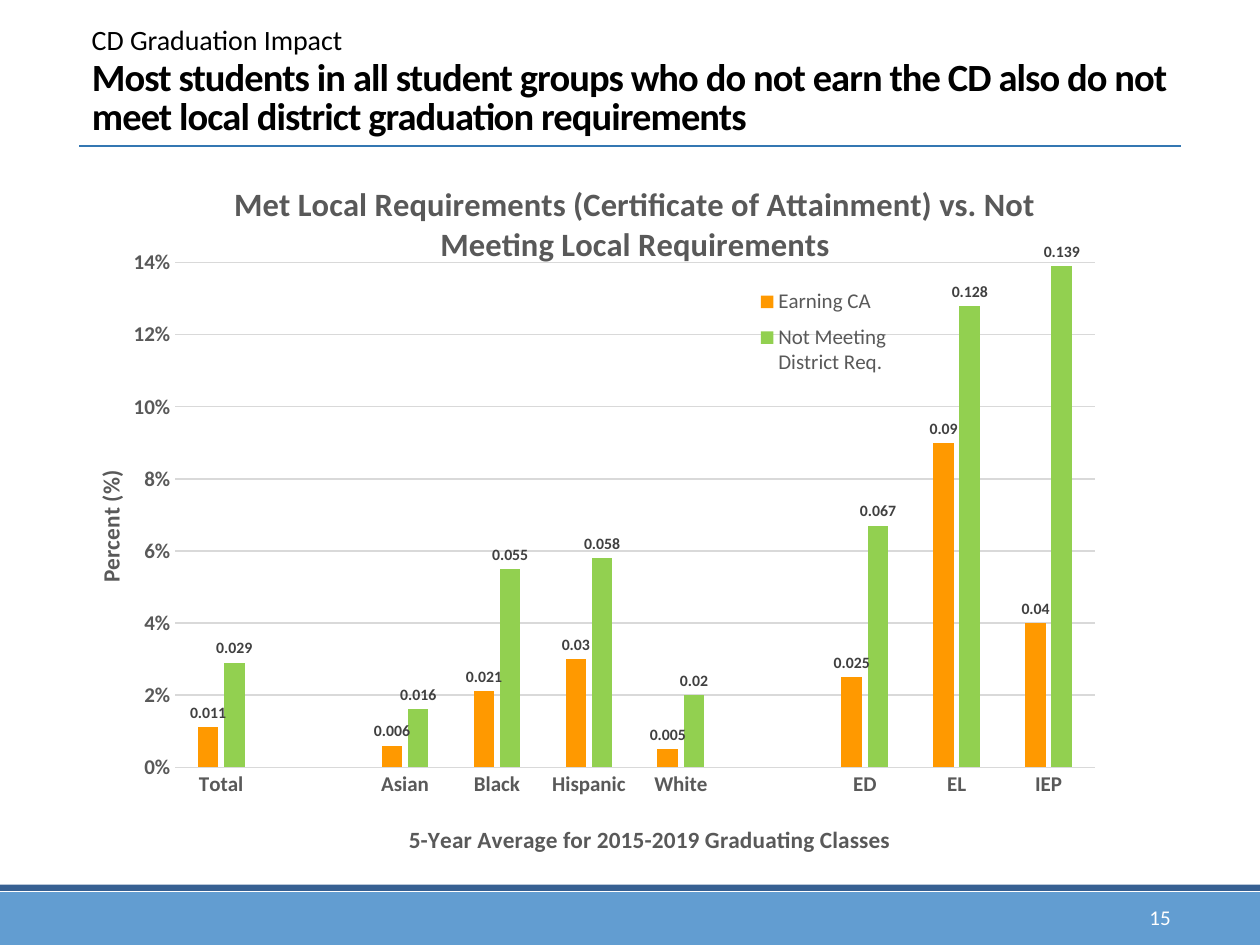
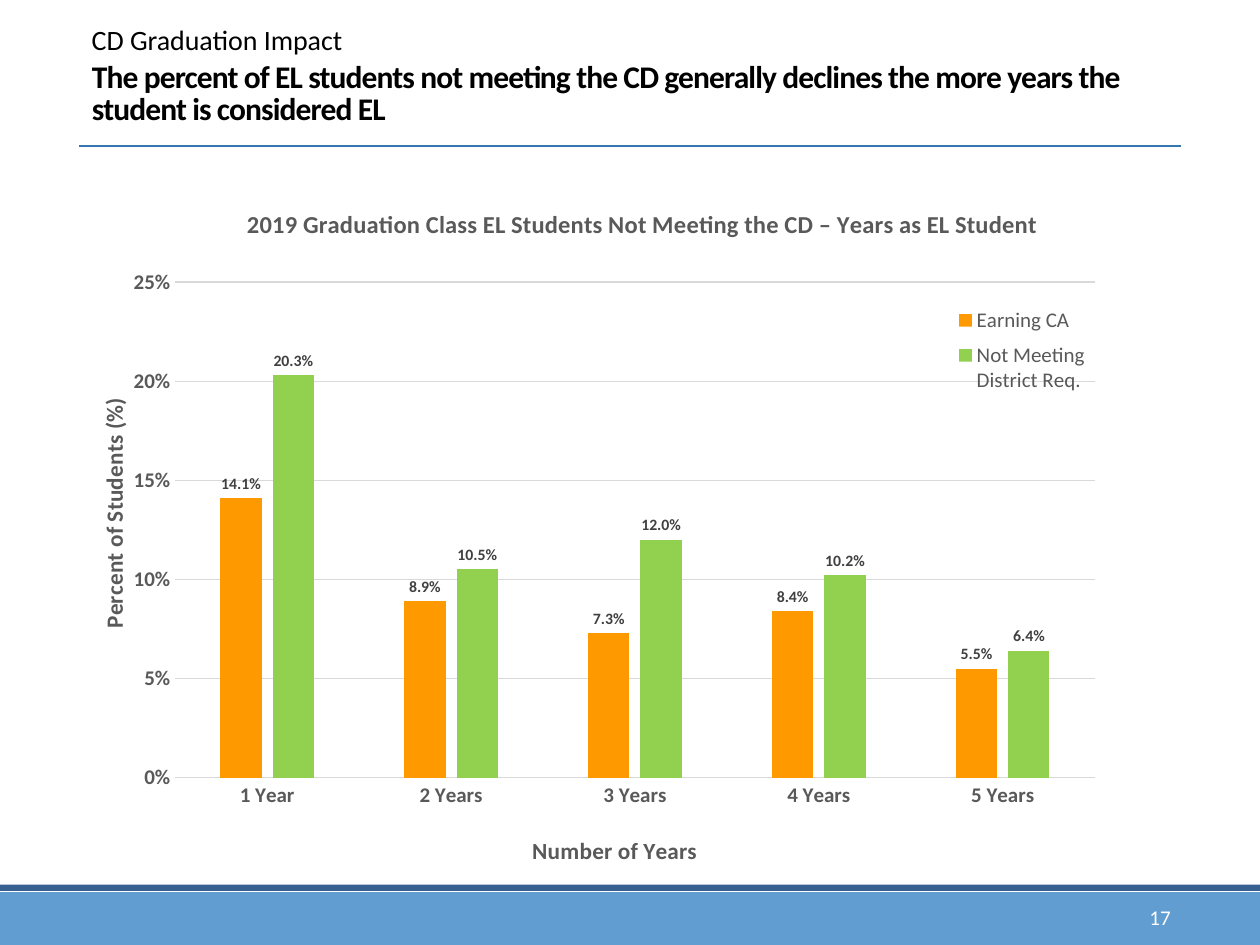
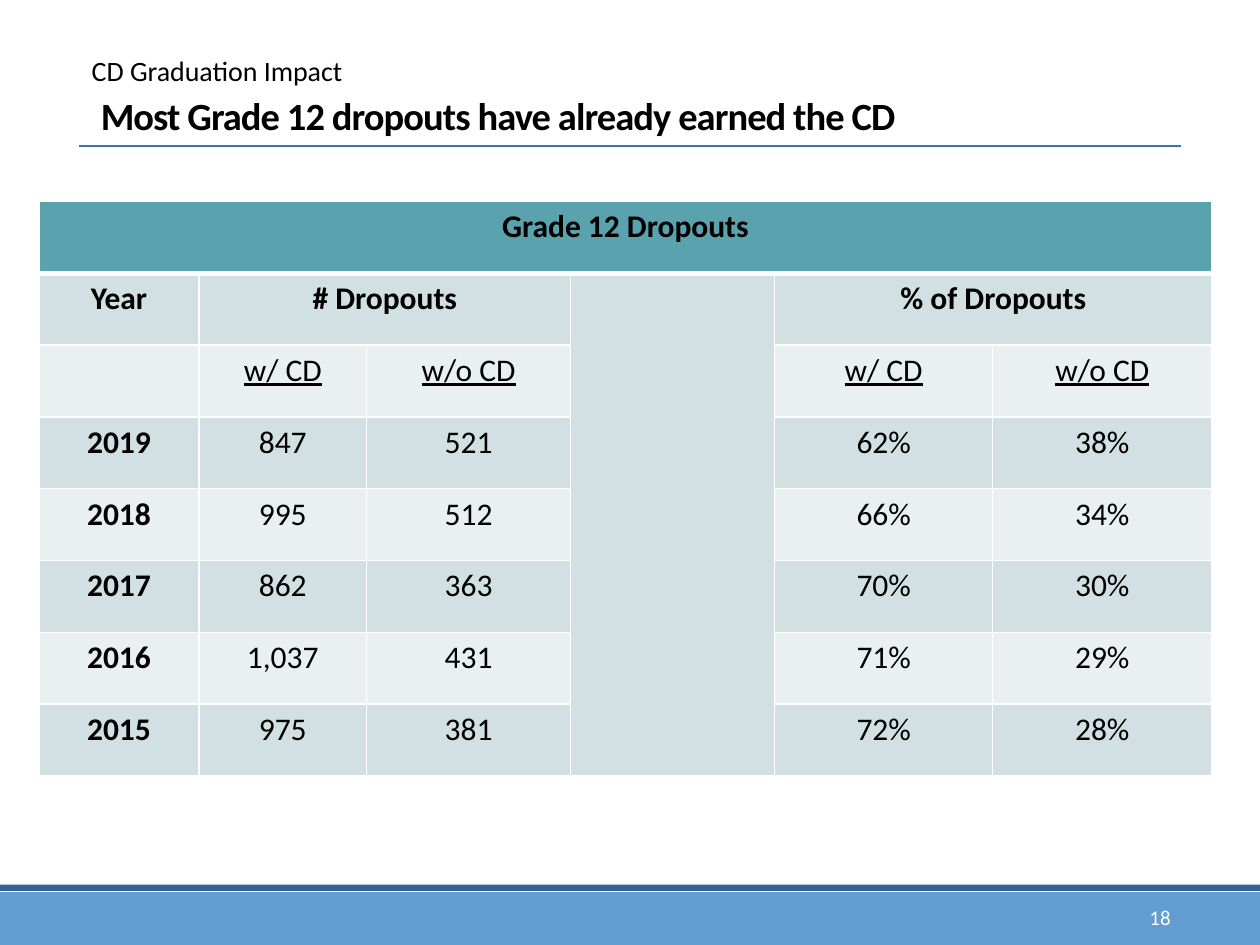
from lxml import etree
from pptx import Presentation
from pptx import util as u
from pptx.chart.data import CategoryChartData
from pptx.dml.color import RGBColor
from pptx.enum import chart as ch, shapes, text
from pptx.oxml import parse_xml
from pptx.oxml.ns import nsdecls, qn

FONT = "Calibri"
BLACK, WHITE, GREY, LABEL, GRID = "000000", "FFFFFF", "595959", "404040", "D9D9D9"
BAND, STRIPE, RULE = "629DD1", "376092", "3477B2"
HEADER, SHADE, TINT = "5AA2AE", "D2E0E3", "EAF0F2"
SERIES_COLORS = ("FF9900", "92D050")
LEFT, WIDTH = 0.63, 8.75


def rgb(color):
    return RGBColor.from_string(color)


def apply(target, **values):
    for name, value in values.items():
        setattr(target, name, value)


def style_font(font, size, color, **values):
    apply(font, name=FONT, size=u.Pt(size), **values)
    font.color.rgb = rgb(color)


def place(element, index, x, y, w=None, h=None, inner=False):
    for old in element.findall(qn("c:layout")):
        element.remove(old)
    layout = parse_xml(f'<c:layout {nsdecls("c")}><c:manualLayout/></c:layout>')
    values = {"layoutTarget": "inner" if inner else None, "xMode": "edge",
              "yMode": "edge", "x": x, "y": y, "w": w, "h": h}
    for tag, value in values.items():
        if value is not None:
            etree.SubElement(layout[0], qn(f"c:{tag}")).set("val", str(value))
    element.insert(index, layout)


def set_borders(cell, bottom=1):
    properties = cell._tc.get_or_add_tcPr()
    for index, side in enumerate("LRTB"):
        width = u.Pt(bottom if side == "B" else 1)
        properties.insert(index, parse_xml(
            f'<a:ln{side} {nsdecls("a")} w="{width}"><a:solidFill>'
            f'<a:srgbClr val="{WHITE}"/></a:solidFill></a:ln{side}>'))


class Deck:
    def __init__(self):
        self.prs = Presentation()
        apply(self.prs, slide_width=u.Inches(10), slide_height=u.Inches(7.5))
        self.slide = None

    def start(self, number, title, size=22, top=0.31, height=0.84, indent=0.1, section_top=0.13):
        self.slide = self.prs.slides.add_slide(self.prs.slide_layouts[5])
        self.band(7.08, 0.42, BAND)
        self.band(7.02, 0.05, STRIPE)
        self.rule(1.16)
        self.label(str(number), 8.31, 7.18, 1.08, 0.2, 12, WHITE, text.PP_ALIGN.RIGHT)
        self.title(title, size, top, height, indent)
        self.label("CD Graduation Impact", LEFT, section_top, 2.6, 0.37, 16, BLACK)

    def band(self, top, height, color):
        band = self.slide.shapes.add_shape(
            shapes.MSO_SHAPE.RECTANGLE, 0, u.Inches(top), u.Inches(10), u.Inches(height))
        band.shadow.inherit = False
        band.fill.solid()
        band.fill.fore_color.rgb = rgb(color)
        band.line.fill.background()

    def rule(self, y):
        rule = self.slide.shapes.add_connector(
            shapes.MSO_CONNECTOR.STRAIGHT, u.Inches(LEFT), u.Inches(y), u.Inches(9.37), u.Inches(y))
        rule.line.color.rgb = rgb(RULE)
        rule.line.width = u.Pt(1)
        etree.SubElement(rule._element.spPr, qn("a:effectLst"))

    def label(self, words, left, top, width, height, size, color, align=text.PP_ALIGN.LEFT):
        box = self.slide.shapes.add_textbox(*map(u.Inches, (left, top, width, height)))
        apply(box.text_frame, word_wrap=True, vertical_anchor=text.MSO_ANCHOR.MIDDLE)
        paragraph = box.text_frame.paragraphs[0]
        apply(paragraph, text=words, alignment=align)
        style_font(paragraph.runs[0].font, size, color)

    def title(self, words, size, top, height, indent):
        title = self.slide.shapes.title
        apply(title, left=u.Inches(LEFT), top=u.Inches(top),
              width=u.Inches(WIDTH), height=u.Inches(height))
        apply(title.text_frame, text=words, word_wrap=True, margin_left=u.Inches(indent),
              auto_size=text.MSO_AUTO_SIZE.NONE, vertical_anchor=text.MSO_ANCHOR.BOTTOM)
        paragraph = title.text_frame.paragraphs[0]
        apply(paragraph, alignment=text.PP_ALIGN.LEFT, line_spacing=0.85)
        style_font(paragraph.runs[0].font, size, BLACK, bold=True)
        paragraph.runs[0]._r.get_or_add_rPr().set("spc", "-50")

    def heading(self, holder, words, size, spot):
        holder.text_frame.text = words
        style_font(holder.text_frame.paragraphs[0].runs[0].font, size, GREY, bold=True)
        place(holder._element, 1, *spot)

    def axis(self, axis, words, spot):
        apply(axis, has_title=True, major_tick_mark=ch.XL_TICK_MARK.NONE,
              minor_tick_mark=ch.XL_TICK_MARK.NONE)
        style_font(axis.tick_labels.font, 12, GREY, bold=True)
        self.heading(axis.axis_title, words, 13.3, spot)

    def chart(self, top, height, categories, series, heading, category_title, value_title,
              maximum, step, label_format, legend_spot):
        data = CategoryChartData()
        data.categories = categories
        for name, values in series.items():
            data.add_series(name, values)
        chart = self.slide.shapes.add_chart(
            ch.XL_CHART_TYPE.COLUMN_CLUSTERED,
            *map(u.Inches, (LEFT, top, WIDTH, height)), data).chart
        style_font(chart.font, 10, BLACK)
        apply(chart, has_title=True, has_legend=True)
        self.heading(chart.chart_title, *heading)

        self.axis(chart.category_axis, *category_title)
        line = chart.category_axis.format.line
        line.color.rgb = rgb(GRID)
        line.width = u.Pt(0.75)

        value_axis = chart.value_axis
        self.axis(value_axis, *value_title)
        body = value_axis.axis_title._element.find(".//" + qn("a:bodyPr"))
        body.set("rot", "-5400000")
        body.set("vert", "horz")
        apply(value_axis, minimum_scale=0, maximum_scale=maximum, major_unit=step)
        apply(value_axis.tick_labels, number_format="0%", number_format_is_linked=False)
        value_axis.format.line.fill.background()
        grid = value_axis.major_gridlines.format.line
        grid.color.rgb = rgb(GRID)
        grid.width = u.Pt(0.75)

        apply(chart.legend, position=ch.XL_LEGEND_POSITION.RIGHT, include_in_layout=False)
        style_font(chart.legend.font, 12, GREY)
        place(chart.legend._element, 1, *legend_spot, 0.14, 0.15)

        plot = chart.plots[0]
        apply(plot, gap_width=219, overlap=-27, vary_by_categories=False)
        place(chart._chartSpace.chart.plotArea, 0, 0.087, 0.163, 0.834, 0.705, inner=True)
        for bars, color in zip(plot.series, SERIES_COLORS):
            bars.format.fill.solid()
            bars.format.fill.fore_color.rgb = rgb(color)
            apply(bars.data_labels, show_value=True, number_format=label_format,
                  number_format_is_linked=False, position=ch.XL_LABEL_POSITION.OUTSIDE_END)
            style_font(bars.data_labels.font, 9, LABEL, bold=True)

    def table(self, rows, widths, left, top, row_height, merges):
        table = self.slide.shapes.add_table(
            len(rows), len(widths), u.Inches(left), u.Inches(top),
            u.Inches(sum(widths)), u.Inches(row_height * len(rows))).table
        for column, width in zip(table.columns, widths):
            column.width = u.Inches(width)
        for r, row in enumerate(rows):
            for c, words in enumerate(row):
                cell = table.cell(r, c)
                cell.fill.solid()
                cell.fill.fore_color.rgb = rgb(HEADER if r == 0 else SHADE if r % 2 else TINT)
                set_borders(cell, bottom=3 if r == 0 else 1)
                paragraph = cell.text_frame.paragraphs[0]
                apply(paragraph, text=words, alignment=text.PP_ALIGN.CENTER)
                style_font(paragraph.font, 18, BLACK)
                for run in paragraph.runs:
                    style_font(run.font, 18, BLACK, bold=r < 2 or c == 0, underline=r == 2)
        for first, last in merges:
            table.cell(*first).merge(table.cell(*last))


def main():
    deck = Deck()

    deck.start(15, "Most students in all student groups who do not earn the CD also do not "
                   "meet local district graduation requirements")
    deck.chart(
        1.16, 5.68,
        ["Total", "", "Asian", "Black", "Hispanic", "White", "", "ED", "EL", "IEP"],
        {"Earning CA": [0.011, None, 0.006, 0.021, 0.03, 0.005, None, 0.025, 0.09, 0.04],
         "Not Meeting District Req.":
             [0.029, None, 0.016, 0.055, 0.058, 0.02, None, 0.067, 0.128, 0.139]},
        heading=("Met Local Requirements (Certificate of Attainment) vs. Not "
                 "Meeting Local Requirements", 18.6, (0.135, 0.04)),
        category_title=("5-Year Average for 2015-2019 Graduating Classes", (0.295, 0.94)),
        value_title=("Percent (%)", (0.01, 0.447)),
        maximum=0.14, step=0.02, label_format="General", legend_spot=(0.605, 0.185))

    deck.start(17, "The percent of EL students not meeting the CD generally declines the more "
                   "years the student is considered EL", size=18, top=0, height=1.06)
    deck.chart(
        1.33, 5.6, ["1 Year"] + [f"{year} Years" for year in range(2, 6)],
        {"Earning CA": [0.141, 0.089, 0.073, 0.084, 0.055],
         "Not Meeting District Req.": [0.203, 0.105, 0.12, 0.102, 0.064]},
        heading=("2019 Graduation Class EL Students Not Meeting the CD – Years as EL Student",
                 14, (0.148, 0.05)),
        category_title=("Number of Years", (0.407, 0.943)),
        value_title=("Percent of Students (%)", (0.013, 0.323)),
        maximum=0.25, step=0.05, label_format="0.0%", legend_spot=(0.785, 0.185))

    deck.start(18, "Most Grade 12 dropouts have already earned the CD",
               indent=0.17, section_top=0.37)
    deck.table(
        [["Grade 12 Dropouts", "", "", "", "", ""],
         ["Year", "# Dropouts", "", "", "% of Dropouts", ""],
         ["", "w/ CD", "w/o CD", "", "w/ CD", "w/o CD"],
         ["2019", "847", "521", "", "62%", "38%"],
         ["2018", "995", "512", "", "66%", "34%"],
         ["2017", "862", "363", "", "70%", "30%"],
         ["2016", "1,037", "431", "", "71%", "29%"],
         ["2015", "975", "381", "", "72%", "28%"]],
        [1.27, 1.33, 1.62, 1.62, 1.73, 1.74], 0.31, 1.6, 0.57,
        merges=[((0, 0), (0, 5)), ((1, 1), (1, 2)), ((1, 3), (7, 3)), ((1, 4), (1, 5))])

    deck.prs.save("out.pptx")


if __name__ == "__main__":
    main()
